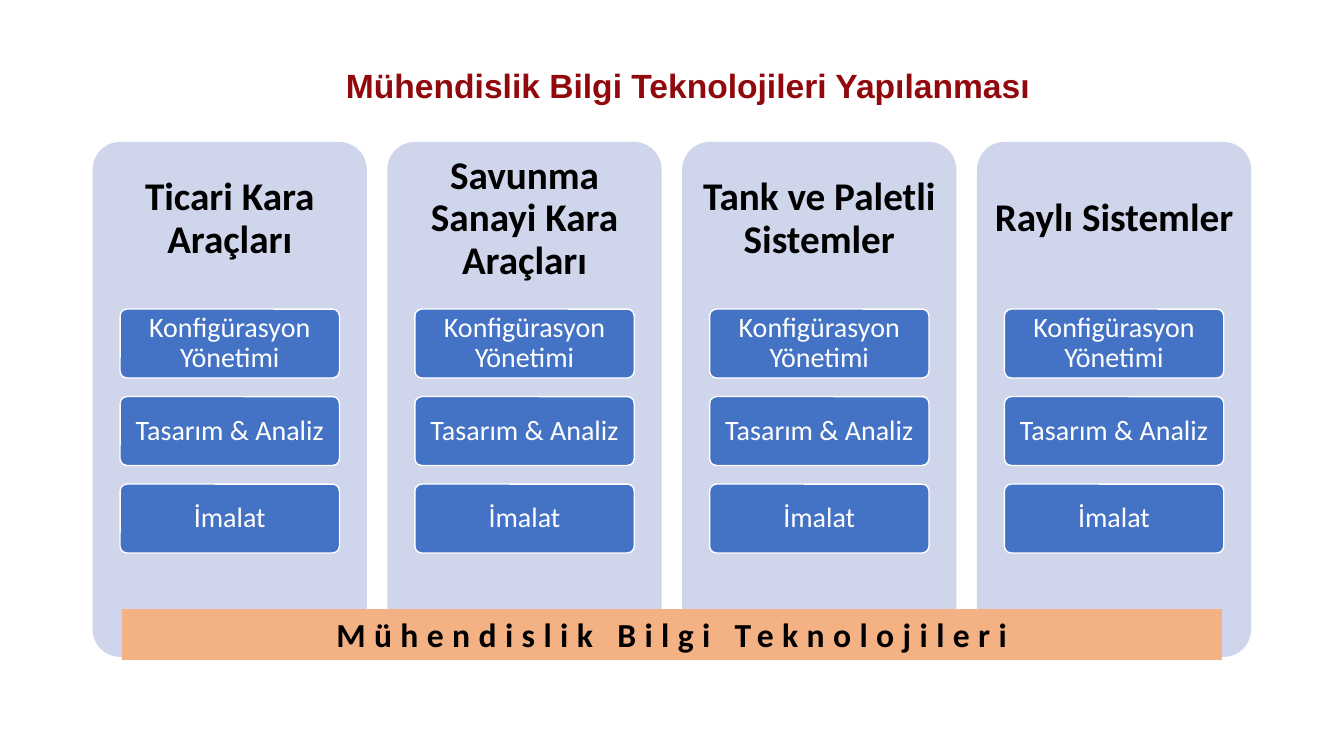
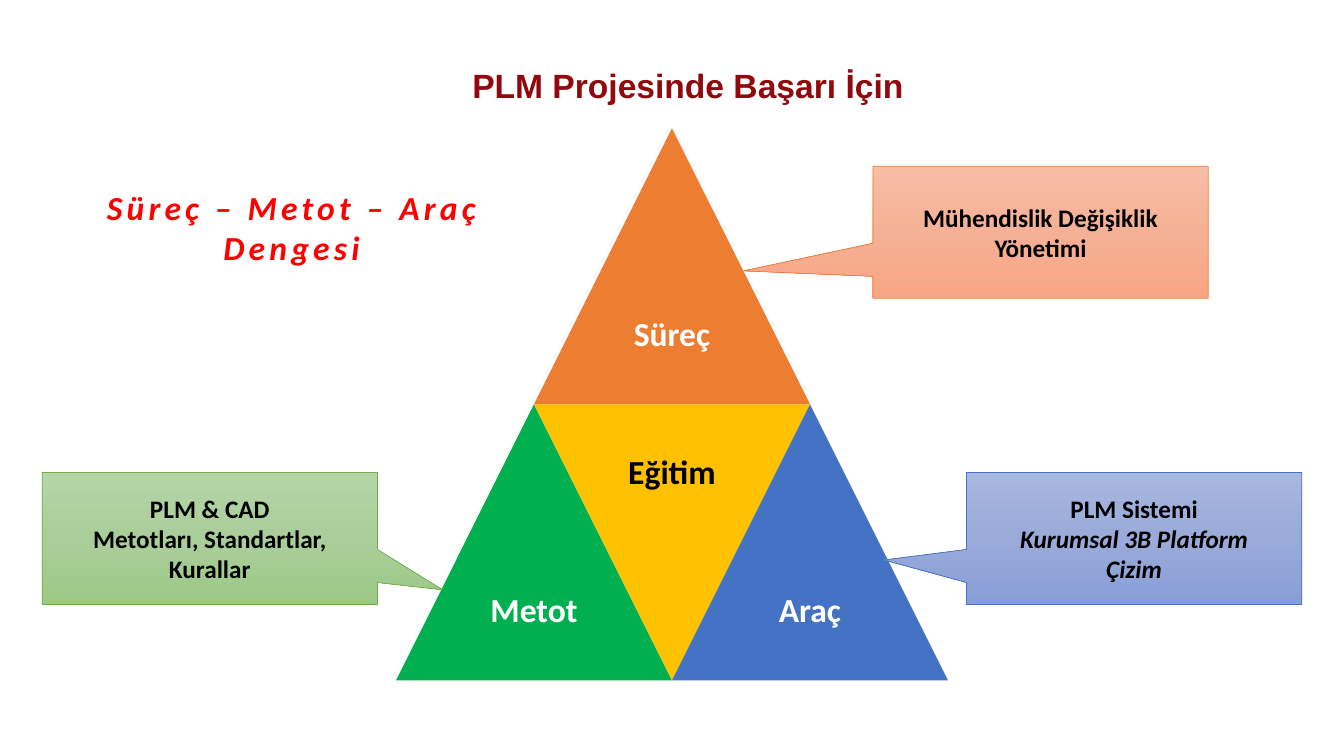
import copy

import pptx
import pptx.dml.color
import pptx.enum.shapes
import pptx.enum.text
import pptx.util

Pt = pptx.util.Pt
SHAPE = pptx.enum.shapes.MSO_SHAPE
ANCHOR = pptx.enum.text.MSO_ANCHOR
CENTER = pptx.enum.text.PP_ALIGN.CENTER
NO_FIT = pptx.enum.text.MSO_AUTO_SIZE.NONE

COLORS = {
    "white": "FFFFFF",
    "black": "000000",
    "maroon": "91090C",
    "red": "FF0000",
    "panel": "CFD5EA",
    "blue": "4472C4",
    "peach": "F4B183",
    "orange": "ED7D31",
    "green": "00B050",
    "yellow": "FFC000",
    "leaf": "70AD47",
}

GRADIENTS = {
    "orange": ("F7BDA5", "F5B196", "F8A582"),
    "blue": ("A8B7DF", "9AABD9", "889ED7"),
    "leaf": ("B5D5A7", "AACE9A", "9CC987"),
}

FORMATS = {
    "title": {"name": "Arial", "size": Pt(24), "bold": True},
    "heading": {"name": "Calibri", "size": Pt(28), "bold": True},
    "step": {"name": "Calibri", "size": Pt(20), "bold": False},
    "label": {"name": "Calibri", "size": Pt(24), "bold": True},
    "note": {"name": "Calibri", "size": Pt(18), "bold": True},
    "note_italic": {"name": "Calibri", "size": Pt(18), "bold": True, "italic": True},
    "motto": {"name": "Calibri", "size": Pt(24), "bold": True, "italic": True},
}


def rgb(code):
    return pptx.dml.color.RGBColor.from_string(code)


class SlideBuilder:
    def __init__(self, deck):
        self.deck = deck
        self.page = None

    def start(self, title):
        self.page = self.deck.slides.add_slide(self.deck.slide_layouts[5])
        box = self.page.shapes.title
        place = {"left": 148.3, "top": 45.4, "width": 686.2, "height": 33.8}
        for name, value in place.items():
            setattr(box, name, Pt(value))
        self.fill_text(box, [(title, "title")], "maroon", spacing=0.9)

    def fill_text(self, box, lines, color, spacing=1.0, insets=(7.2, 3.6), tracking=0, wrap=True):
        frame = box.text_frame
        side, edge = map(Pt, insets)
        settings = {
            "auto_size": NO_FIT,
            "word_wrap": wrap,
            "vertical_anchor": ANCHOR.MIDDLE,
            "margin_left": side,
            "margin_right": side,
            "margin_top": edge,
            "margin_bottom": edge,
        }
        for name, value in settings.items():
            setattr(frame, name, value)
        for index, (text, style) in enumerate(lines):
            para = frame.add_paragraph() if index else frame.paragraphs[0]
            para.alignment = CENTER
            para.line_spacing = spacing
            span = para.add_run()
            span.text = text
            for name, value in FORMATS[style].items():
                setattr(span.font, name, value)
            span.font.color.rgb = rgb(COLORS[color])
            if tracking:
                span.font._element.set("spc", str(tracking * 100))

    def text(self, place, lines, color, **options):
        box = self.page.shapes.add_textbox(*map(Pt, place))
        self.fill_text(box, lines, color, **options)

    def shape(self, kind, place, fill=None, line=None, weight=1, adjust=()):
        box = self.page.shapes.add_shape(kind, *map(Pt, place))
        box.shadow.inherit = False
        for index, value in enumerate(adjust):
            box.adjustments[index] = value
        if fill:
            box.fill.solid()
            box.fill.fore_color.rgb = rgb(COLORS[fill])
        if line:
            box.line.color.rgb = rgb(COLORS[line])
            box.line.width = Pt(weight)
        else:
            box.line.fill.background()
        return box

    def callout(self, left, top, tip, tone, lines):
        box = self.shape(SHAPE.RECTANGULAR_CALLOUT, (left, top, 239.4, 94.3),
                         line=tone, weight=0.5, adjust=tip)
        box.fill.gradient()
        box.fill.gradient_angle = 270
        first = box.fill.gradient_stops[0]._gs
        first.addnext(copy.deepcopy(first))
        for index, stop in enumerate(box.fill.gradient_stops):
            stop.position = index / 2
            stop.color.rgb = rgb(GRADIENTS[tone][index])
        self.fill_text(box, lines, "black")


def build_structure(builder):
    builder.start("Mühendislik Bilgi Teknolojileri Yapılanması")
    headings = ["Ticari Kara Araçları", "Savunma Sanayi Kara Araçları",
                "Tank ve Paletli Sistemler", "Raylı Sistemler"]
    steps = ["Konfigürasyon Yönetimi", "Tasarım & Analiz", "İmalat"]
    for column, heading in enumerate(headings):
        left = 66.2 + column * 210.55
        builder.shape(SHAPE.ROUNDED_RECTANGLE, (left, 101.4, 195.8, 367.8), "panel", adjust=[0.1])
        builder.text((left, 101.4, 195.8, 110.3), [(heading, "heading")], "black",
                     spacing=0.9, insets=(8.4, 8.4))
        for row, step in enumerate(steps):
            box = builder.shape(SHAPE.ROUNDED_RECTANGLE,
                                (left + 19.6, 220.8 + row * 62.5, 156.7, 49.2),
                                "blue", "white", adjust=[0.1])
            builder.fill_text(box, [(step, "step")], "white", spacing=0.9, insets=(4, 3))
    bar = builder.shape(SHAPE.RECTANGLE, (87.1, 435, 785.7, 36.3), "peach")
    builder.fill_text(bar, [("Mühendislik Bilgi Teknolojileri", "label")], "black", tracking=6)


def build_success(builder):
    builder.start("PLM Projesinde Başarı İçin")
    side, center, top = 197.2, 480, 91.6
    triangles = [
        ("Süreç", SHAPE.ISOSCELES_TRIANGLE, 0, 0, "orange", "white"),
        ("Metot", SHAPE.ISOSCELES_TRIANGLE, -0.5, 1, "green", "white"),
        ("Eğitim", SHAPE.FLOWCHART_MERGE, 0, 1, "yellow", "black"),
        ("Araç", SHAPE.ISOSCELES_TRIANGLE, 0.5, 1, "blue", "white"),
    ]
    for label, kind, shift, row, fill, color in triangles:
        place = (center + (shift - 0.5) * side, top + row * side, side, side)
        box = builder.shape(kind, place, fill)
        builder.fill_text(box, [(label, "label")], color, spacing=0.9, insets=(7.2, 7.2))
    builder.callout(623.6, 118.8, (-0.886, 0.292), "orange",
                    [("Mühendislik Değişiklik Yönetimi", "note")])
    builder.callout(690.4, 337.5, (-0.746, 0.163), "blue",
                    [("PLM Sistemi", "note"),
                     ("Kurumsal 3B Platform", "note_italic"),
                     ("Çizim", "note_italic")])
    builder.callout(30.2, 337.5, (0.694, 0.388), "leaf",
                    [("PLM & CAD", "note"), ("Metotları, Standartlar, Kurallar", "note")])
    builder.text((66.4, 129.6, 283.7, 65.4),
                 [("Süreç – Metot – Araç", "motto"), ("Dengesi", "motto")],
                 "red", tracking=3, wrap=False)


def main():
    deck = pptx.Presentation()
    deck.slide_width = Pt(960)
    deck.slide_height = Pt(540)
    builder = SlideBuilder(deck)
    build_structure(builder)
    build_success(builder)
    deck.save("out.pptx")


if __name__ == "__main__":
    main()
